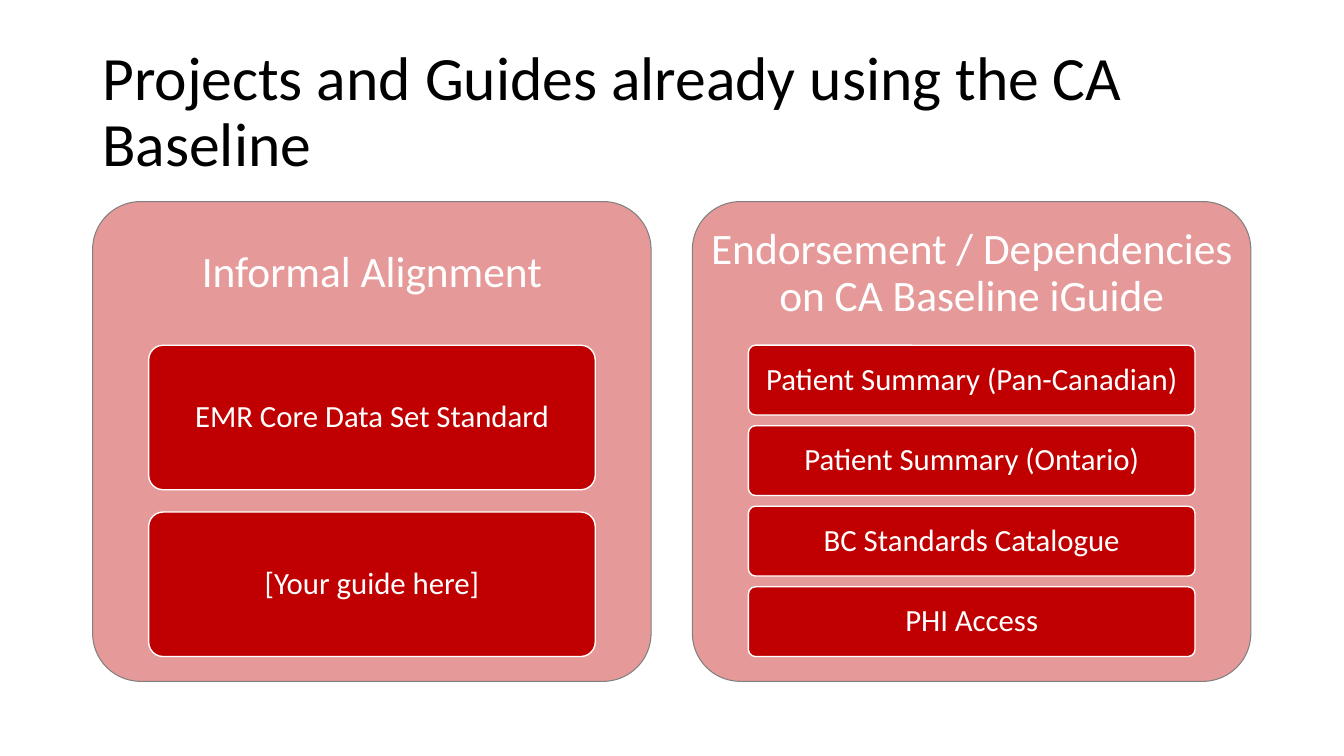
from lxml import etree
from pptx import Presentation
from pptx.dml.color import RGBColor
from pptx.enum.shapes import MSO_SHAPE
from pptx.enum.text import MSO_ANCHOR, PP_ALIGN
from pptx.oxml.ns import qn
from pptx.util import Pt

ROUNDED = MSO_SHAPE.ROUNDED_RECTANGLE
MIDDLE = MSO_ANCHOR.MIDDLE
LEFT, CENTER = PP_ALIGN.LEFT, PP_ALIGN.CENTER

RED, WHITE, GREY, BLACK = "C00000", "FFFFFF", "808080", "000000"
PANEL_TOP, PANEL_WIDTH, PANEL_HEIGHT = 144, 398.9, 342.7
HEADING_HEIGHT = 103
CARD_INDENT, CARD_WIDTH = 40, 319
CARDS_TOP, CARDS_HEIGHT = 246.6, 222.4
GAP_RATIO = 0.154  # gap between cards as a share of card height

PANELS = [
    (66.2, "Informal Alignment",
     ["EMR Core Data Set Standard", "[Your guide here]"]),
    (494.6, "Endorsement / Dependencies on CA Baseline iGuide",
     ["Patient Summary (Pan-Canadian)", "Patient Summary (Ontario)",
      "BC Standards Catalogue", "PHI Access"]),
]


def write_text(shape, text, size, color=WHITE, align=CENTER, inset_x=4.3, inset_y=3.6):
    frame = shape.text_frame
    frame.word_wrap = True
    frame.vertical_anchor = MIDDLE
    frame.margin_left = frame.margin_right = Pt(inset_x)
    frame.margin_top = frame.margin_bottom = Pt(inset_y)
    paragraph = frame.paragraphs[0]
    paragraph.alignment = align
    paragraph.line_spacing = 0.9
    run = paragraph.add_run()
    run.text = text
    run.font.name = "Calibri"
    run.font.size = Pt(size)
    run.font.color.rgb = RGBColor.from_string(color)


def add_rounded(left, top, width, height, line_color, line_width):
    shape = slide.shapes.add_shape(ROUNDED, Pt(left), Pt(top), Pt(width), Pt(height))
    shape.adjustments[0] = 0.1
    shape.shadow.inherit = False
    shape.fill.solid()
    shape.fill.fore_color.rgb = RGBColor.from_string(RED)
    shape.line.color.rgb = RGBColor.from_string(line_color)
    shape.line.width = Pt(line_width)
    return shape


presentation = Presentation()
presentation.slide_width = Pt(960)
presentation.slide_height = Pt(540)
slide = presentation.slides.add_slide(presentation.slide_layouts[6])

# Title
title = slide.shapes.add_textbox(Pt(66), Pt(28.8), Pt(828), Pt(104.4))
write_text(title, "Projects and Guides already using the CA Baseline", 44,
           color=BLACK, align=LEFT, inset_x=7.2)

for left, heading_text, guides in PANELS:
    # Translucent panel
    panel = add_rounded(left, PANEL_TOP, PANEL_WIDTH, PANEL_HEIGHT, GREY, 0.75)
    panel_color = panel.fill._xPr.find(qn("a:solidFill"))[0]
    etree.SubElement(panel_color, qn("a:alpha")).set("val", "40000")

    # Panel heading
    heading = slide.shapes.add_textbox(Pt(left), Pt(PANEL_TOP), Pt(PANEL_WIDTH),
                                       Pt(HEADING_HEIGHT))
    write_text(heading, heading_text, 31, inset_x=9.3, inset_y=9.3)

    # Cards share the same area, whatever their number
    count = len(guides)
    card_height = CARDS_HEIGHT / (count + GAP_RATIO * (count - 1))
    for index, guide in enumerate(guides):
        top = CARDS_TOP + index * card_height * (1 + GAP_RATIO)
        card = add_rounded(left + CARD_INDENT, top, CARD_WIDTH, card_height, WHITE, 1)
        write_text(card, guide, 22)

presentation.save("out.pptx")
